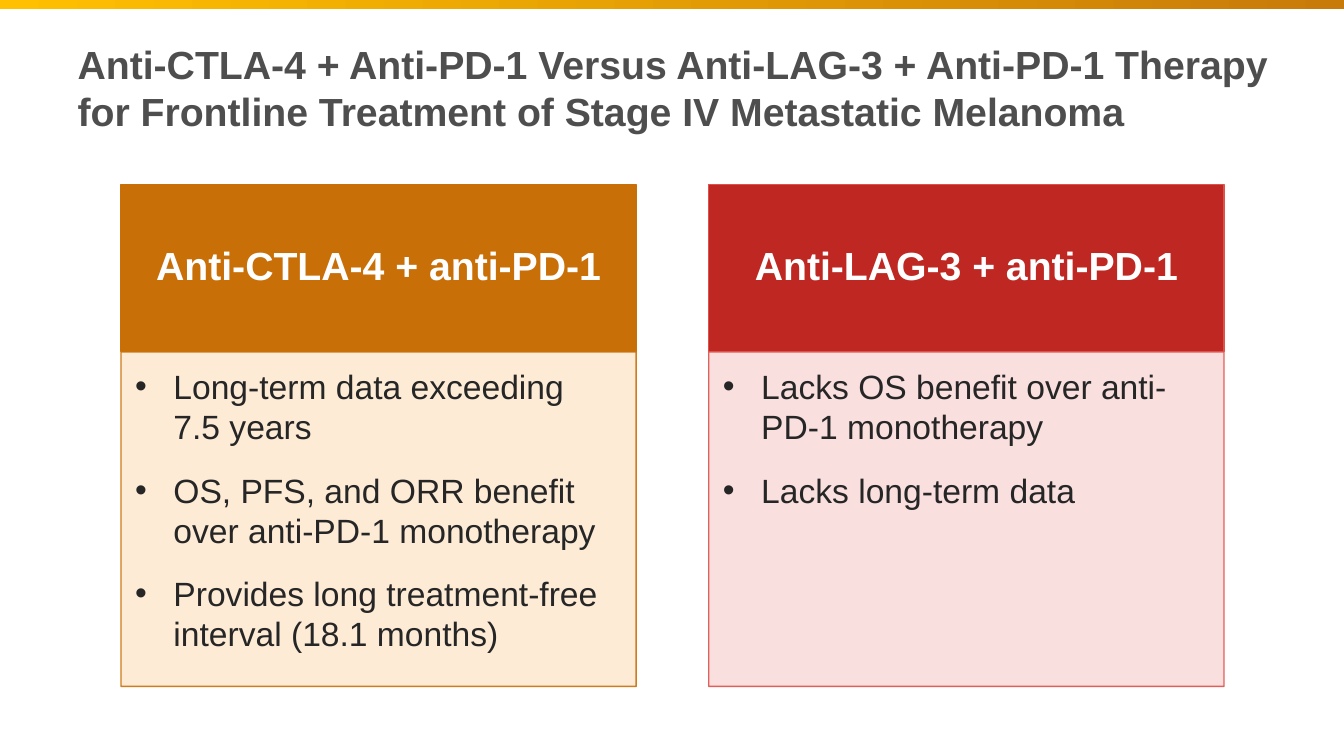
from dataclasses import dataclass

import lxml.etree
import pptx
import pptx.dml.color
import pptx.enum.shapes
import pptx.enum.text
import pptx.oxml.ns
import pptx.util

SLIDE_WIDTH, SLIDE_HEIGHT = 13.33, 7.5
GRID_LEFT, GRID_TOP = 1.2, 1.83
COLUMN_WIDTH, GUTTER, ROW_HEIGHT = 5.11, 0.72, 1.66
FONT = "Arial"
Inches = pptx.util.Inches
Align = pptx.enum.text.PP_ALIGN
Anchor = pptx.enum.text.MSO_ANCHOR


@dataclass(frozen=True)
class Therapy:
    name: str
    findings: tuple[str, ...]
    header_fill: str
    findings_fill: str
    border: str


THERAPIES = (
    Therapy(
        "Anti-CTLA-4 + anti-PD-1",
        (
            "Long-term data exceeding 7.5 years",
            "OS, PFS, and ORR benefit over anti-PD-1 monotherapy",
            "Provides long treatment-free interval (18.1 months)",
        ),
        "C96F07", "FDE9D2", "C96F07",
    ),
    Therapy(
        "Anti-LAG-3 + anti-PD-1",
        ("Lacks OS benefit over anti-PD-1 monotherapy", "Lacks long-term data"),
        "BE2722", "F9DCDB", "DF504B",
    ),
)


def rgb(color: str) -> pptx.dml.color.RGBColor:
    return pptx.dml.color.RGBColor.from_string(color)


def place(shape, left: float, top: float, width: float, height: float) -> None:
    shape.left, shape.top = Inches(left), Inches(top)
    shape.width, shape.height = Inches(width), Inches(height)


def place_in_grid(shape, column: int, row: int, rows: int) -> None:
    left = GRID_LEFT + column * (COLUMN_WIDTH + GUTTER)
    place(shape, left, GRID_TOP + row * ROW_HEIGHT, COLUMN_WIDTH, rows * ROW_HEIGHT)


def prepare_frame(shape, anchor, insets: tuple[float, float, float, float]):
    frame = shape.text_frame
    frame.word_wrap = True
    frame.auto_size = pptx.enum.text.MSO_AUTO_SIZE.NONE
    frame.vertical_anchor = anchor
    frame.margin_left, frame.margin_top, frame.margin_right, frame.margin_bottom = map(Inches, insets)
    return frame


def add_text(paragraph, text: str, size: float, color: str, bold: bool, alignment) -> None:
    paragraph.alignment = alignment
    paragraph.space_before = pptx.util.Pt(0)
    run = paragraph.add_run()
    run.text = text
    run.font.name = FONT
    run.font.size = pptx.util.Pt(size)
    run.font.bold = bold
    run.font.color.rgb = rgb(color)


def paint(shape, fill: str, border: str, opacity: int = 100) -> None:
    shape.fill.solid()
    shape.fill.fore_color.rgb = rgb(fill)
    shape.line.color.rgb = rgb(border)
    shape.line.width = pptx.util.Pt(1)
    if opacity < 100:
        for color in shape.fill._xPr.iter(pptx.oxml.ns.qn("a:srgbClr")):
            alpha = lxml.etree.SubElement(color, pptx.oxml.ns.qn("a:alpha"))
            alpha.set("val", str(opacity * 1000))


def add_bullet(paragraph) -> None:
    properties = paragraph._p.get_or_add_pPr()
    properties.set("marL", str(Inches(0.38)))
    properties.set("indent", str(Inches(-0.38)))
    font = lxml.etree.SubElement(properties, pptx.oxml.ns.qn("a:buFont"))
    font.set("typeface", FONT)
    bullet = lxml.etree.SubElement(properties, pptx.oxml.ns.qn("a:buChar"))
    bullet.set("char", "•")


def draw_top_band(slide) -> None:
    band = slide.shapes.add_shape(
        pptx.enum.shapes.MSO_SHAPE.RECTANGLE, 0, 0, Inches(SLIDE_WIDTH), Inches(0.09)
    )
    band.shadow.inherit = False
    band.line.fill.background()
    band.fill.gradient()
    band.fill.gradient_angle = 0
    for stop, color in zip(band.fill.gradient_stops, ("FFC000", "C97B09")):
        stop.color.rgb = rgb(color)


def draw_title(title, text: str) -> None:
    place(title, 0.67, 0.22, 12.28, 1.3)
    frame = prepare_frame(title, Anchor.MIDDLE, (0.1, 0.05, 0.1, 0.05))
    add_text(frame.paragraphs[0], text, 28, "4D4E4D", True, Align.LEFT)


def draw_therapy(header, findings, column: int, therapy: Therapy) -> None:
    place_in_grid(header, column, row=0, rows=1)
    paint(header, therapy.header_fill, therapy.border)
    frame = prepare_frame(header, Anchor.MIDDLE, (0.19, 0.11, 0.19, 0.11))
    frame.paragraphs[0].line_spacing = 0.9
    add_text(frame.paragraphs[0], therapy.name, 28, "FFFFFF", True, Align.CENTER)

    place_in_grid(findings, column, row=1, rows=2)
    paint(findings, therapy.findings_fill, therapy.border, opacity=90)
    frame = prepare_frame(findings, Anchor.TOP, (0.14, 0.14, 0.19, 0.21))
    for index, finding in enumerate(therapy.findings):
        paragraph = frame.add_paragraph() if index else frame.paragraphs[0]
        paragraph.level = 1
        paragraph.space_after = pptx.util.Pt(16.3)
        add_text(paragraph, finding, 24, "262626", False, Align.LEFT)
        add_bullet(paragraph)


def main() -> None:
    deck = pptx.Presentation()
    deck.slide_width, deck.slide_height = Inches(SLIDE_WIDTH), Inches(SLIDE_HEIGHT)
    slide = deck.slides.add_slide(deck.slide_layouts.get_by_name("Comparison"))
    draw_top_band(slide)
    draw_title(
        slide.shapes.title,
        "Anti-CTLA-4 + Anti-PD-1 Versus Anti-LAG-3 + Anti-PD-1 Therapy "
        "for Frontline Treatment of Stage IV Metastatic Melanoma",
    )
    bodies = list(slide.placeholders)[1:]
    for column, therapy in enumerate(THERAPIES):
        header, findings = bodies[2 * column:2 * column + 2]
        draw_therapy(header, findings, column, therapy)
    deck.save("out.pptx")


if __name__ == "__main__":
    main()
